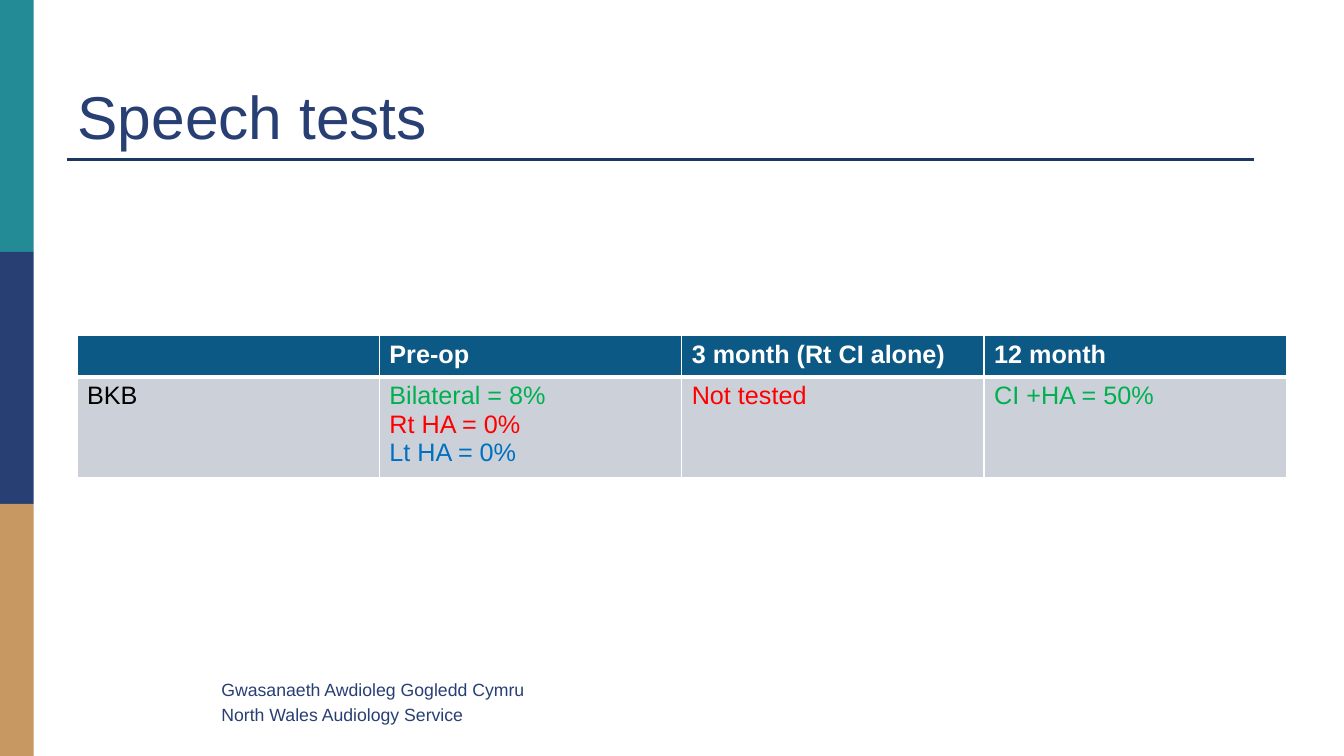
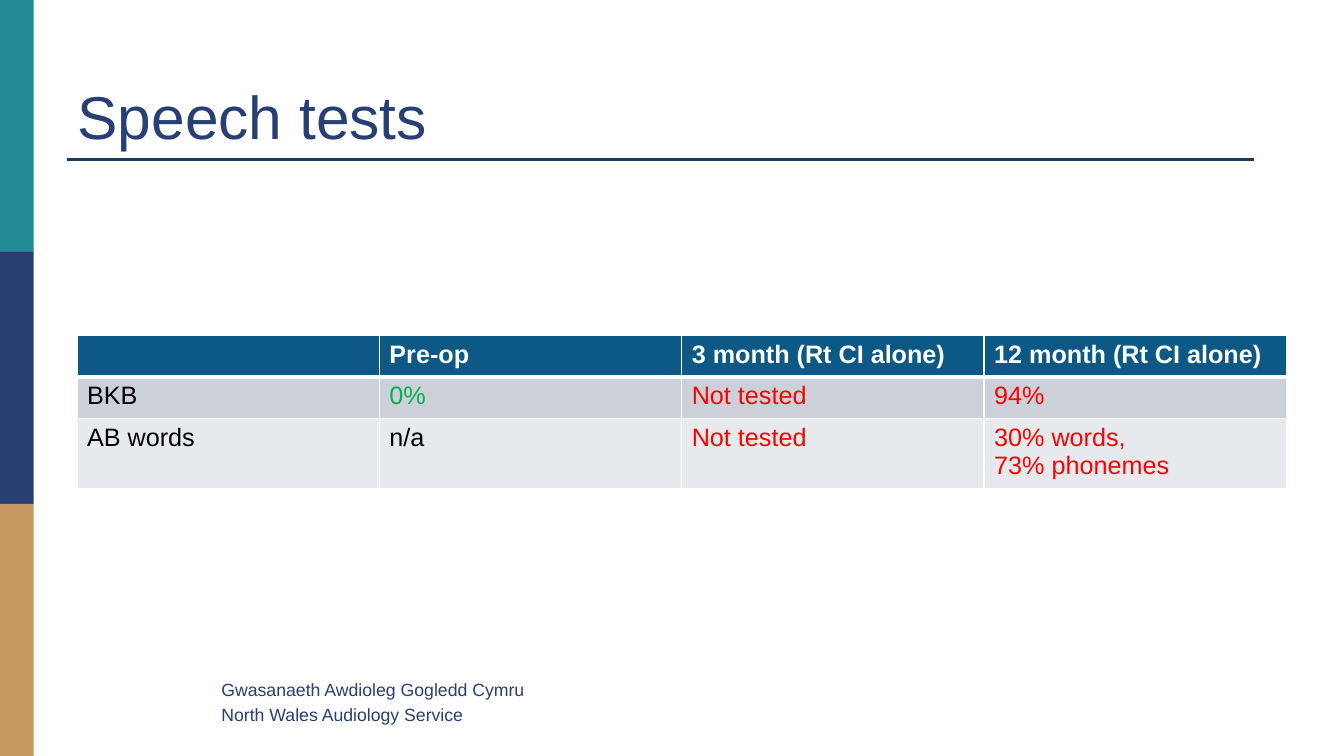
from lxml import etree
from pptx import Presentation, util as u
from pptx.dml.color import RGBColor
from pptx.enum import shapes, text
from pptx.oxml.ns import qn

TEAL = RGBColor(0x22, 0x8B, 0x96)
NAVY = RGBColor(0x28, 0x3F, 0x74)
SAND = RGBColor(0xC7, 0x98, 0x61)
RULE = RGBColor(0x1B, 0x38, 0x61)
HEADER = RGBColor(0x0C, 0x59, 0x86)
ROW_FILLS = RGBColor(0xCC, 0xD1, 0xD9), RGBColor(0xE7, 0xEA, 0xED)
WHITE = RGBColor(0xFF, 0xFF, 0xFF)
BLACK = RGBColor(0, 0, 0)
GREEN = RGBColor(0, 0xB0, 0x50)
RED = RGBColor(0xFF, 0, 0)
BLUE = RGBColor(0, 0x70, 0xC0)
FONT = "Arial"

FOOTER = ["Gwasanaeth Awdioleg Gogledd Cymru", "North Wales Audiology Service"]
NOT_TESTED = [("Not tested", RED)]
SLIDES = [
    ("Speech tests",
     ["", "Pre-op", "3 month (Rt CI alone)", "12 month"],
     [[[("BKB", BLACK)],
       [("Bilateral = 8%", GREEN), ("Rt HA = 0%", RED), ("Lt HA = 0%", BLUE)],
       NOT_TESTED,
       [("CI +HA = 50%", GREEN)]]]),
    ("Speech tests",
     ["", "Pre-op", "3 month (Rt CI alone)", "12 month (Rt CI alone)"],
     [[[("BKB", BLACK)], [("0%", GREEN)], NOT_TESTED, [("94%", RED)]],
      [[("AB words", BLACK)], [("n/a", BLACK)], NOT_TESTED,
       [("30% words,", RED), ("73% phonemes", RED)]]]),
]

WIDTH, HEIGHT = u.Cm(33.87), u.Cm(19.05)
BAND_WIDTH, BAND_HEIGHT = u.Cm(0.85), u.Cm(6.35)
TABLE_LEFT, TABLE_TOP, COL_WIDTH = u.Cm(1.94), u.Cm(8.46), u.Cm(7.62)
ROW_HEIGHT, EXTRA_LINE = u.Cm(1.04), u.Cm(0.65)


def write(tf, lines, size, bold=False, gap=0):
    for i, (line, color) in enumerate(lines):
        p = tf.add_paragraph() if i else tf.paragraphs[0]
        p.alignment = text.PP_ALIGN.LEFT
        if i and gap:
            p.space_before = u.Pt(gap)
        r = p.add_run()
        r.text = line
        r.font.name, r.font.size, r.font.bold = FONT, u.Pt(size), bold
        r.font.color.rgb = color


def add_frame(s):
    for i, color in enumerate([TEAL, NAVY, SAND]):
        sp = s.shapes.add_shape(shapes.MSO_SHAPE.RECTANGLE, 0, i * BAND_HEIGHT,
                                BAND_WIDTH, BAND_HEIGHT)
        sp.shadow.inherit = False
        sp.fill.solid()
        sp.fill.fore_color.rgb = color
        sp.line.fill.background()
    rule = s.shapes.add_connector(shapes.MSO_CONNECTOR.STRAIGHT, u.Cm(1.7), u.Cm(4.02),
                                  u.Cm(31.6), u.Cm(4.02))
    rule.line.color.rgb = RULE
    rule.line.width = u.Pt(1.5)
    etree.SubElement(rule._element.spPr, qn("a:effectLst"))
    footer = s.shapes.add_textbox(u.Cm(5.33), u.Cm(16.97), u.Cm(13.13), u.Cm(1.4))
    footer.text_frame.word_wrap = True
    write(footer.text_frame, [(line, NAVY) for line in FOOTER], 12.6, gap=3)


def add_title(s, title):
    sp = s.shapes.title
    sp.left, sp.top, sp.width, sp.height = u.Cm(1.7), u.Cm(0.76), u.Cm(21.59), u.Cm(3.18)
    tf = sp.text_frame
    tf.vertical_anchor = text.MSO_ANCHOR.BOTTOM
    tf.auto_size = text.MSO_AUTO_SIZE.NONE
    write(tf, [(title, NAVY)], 43.2)


def set_borders(cell, bottom):
    tcPr = cell._tc.get_or_add_tcPr()
    for i, (side, width) in enumerate([("L", 1), ("R", 1), ("T", 1), ("B", bottom)]):
        ln = etree.Element(qn(f"a:ln{side}"), w=str(u.Pt(width)))
        fill = etree.SubElement(ln, qn("a:solidFill"))
        etree.SubElement(fill, qn("a:srgbClr"), val=str(WHITE))
        tcPr.insert(i, ln)


def add_table(s, header, body):
    rows = [[[(label, WHITE)] if label else [] for label in header]] + body
    heights = [ROW_HEIGHT + EXTRA_LINE * (max(map(len, row)) - 1) for row in rows]
    table = s.shapes.add_table(len(rows), len(header), TABLE_LEFT, TABLE_TOP,
                               COL_WIDTH * len(header), sum(heights)).table
    for col in table.columns:
        col.width = COL_WIDTH
    for i, row in enumerate(rows):
        table.rows[i].height = heights[i]
        is_header = i == 0
        for j, lines in enumerate(row):
            cell = table.cell(i, j)
            cell.fill.solid()
            cell.fill.fore_color.rgb = HEADER if is_header else ROW_FILLS[(i - 1) % 2]
            set_borders(cell, 3 if i == 0 else 1)
            write(cell.text_frame, lines, 18, bold=is_header)


def main():
    prs = Presentation()
    prs.slide_width, prs.slide_height = WIDTH, HEIGHT
    for title, header, body in SLIDES:
        s = prs.slides.add_slide(prs.slide_layouts[5])
        add_frame(s)
        add_title(s, title)
        add_table(s, header, body)
    prs.save("out.pptx")


if __name__ == "__main__":
    main()
